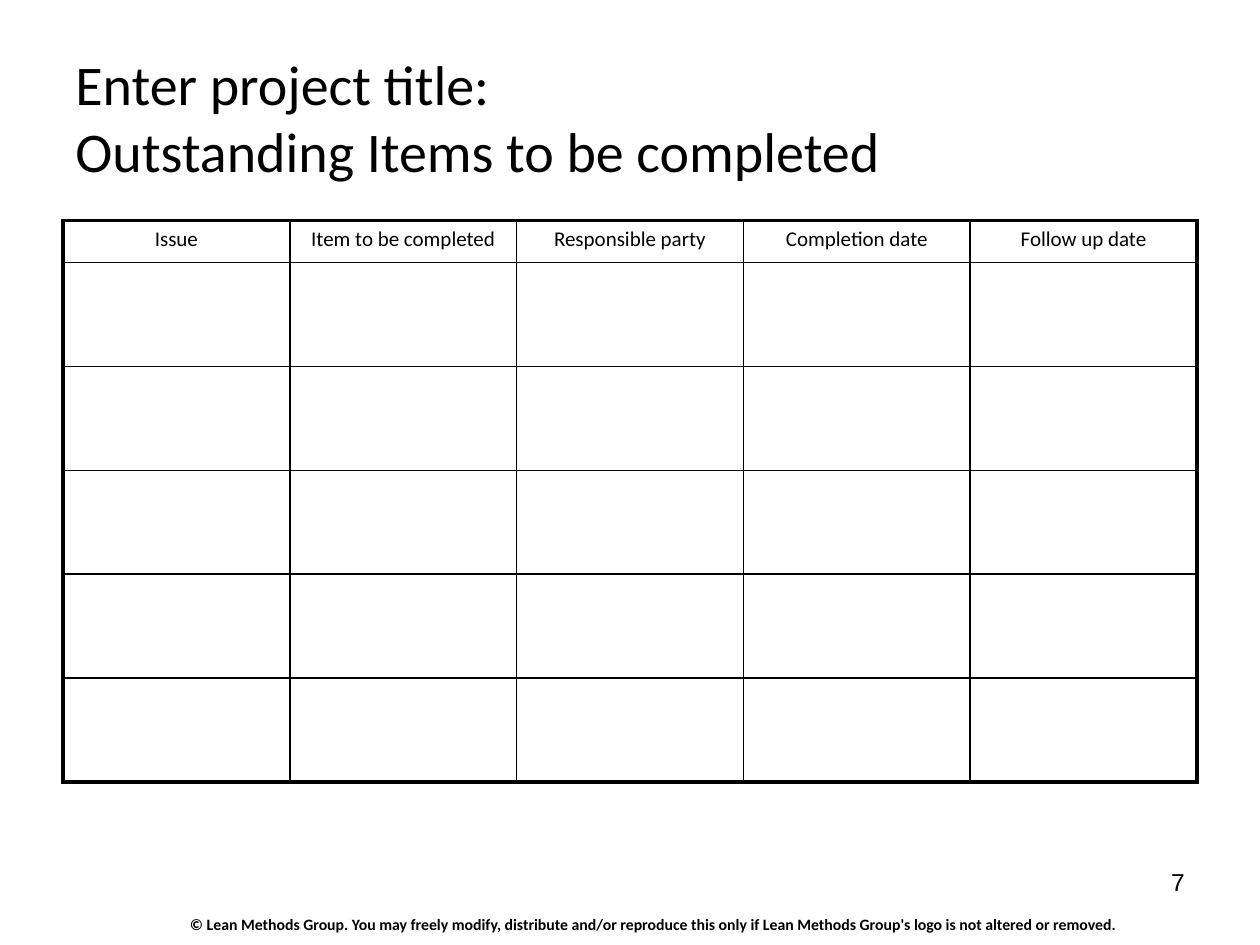
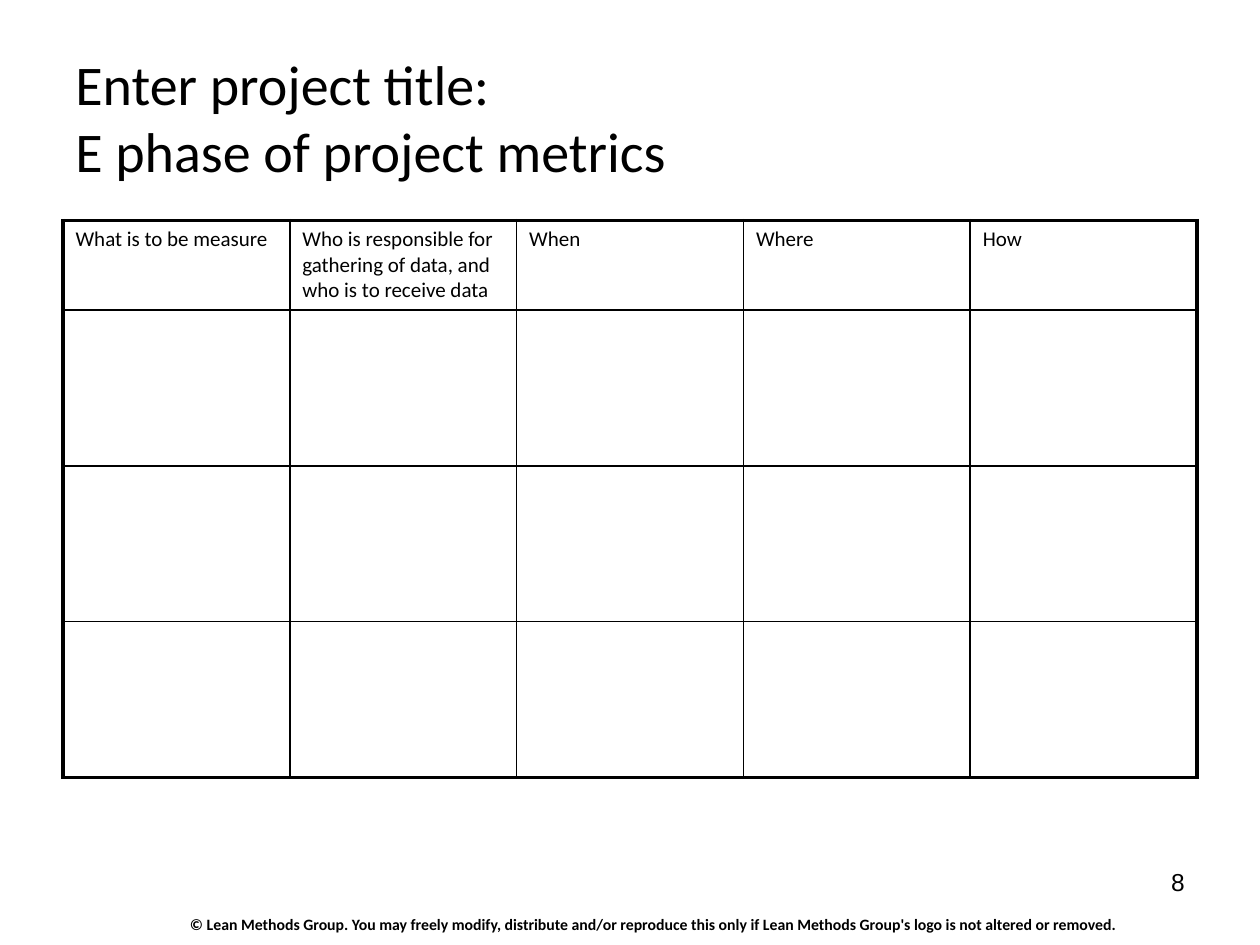
from pptx import Presentation
from pptx.dml.color import RGBColor
from pptx.enum.text import MSO_ANCHOR, PP_ALIGN
from pptx.oxml import parse_xml
from pptx.oxml.ns import nsdecls
from pptx.util import Pt

LEFT, CENTER, RIGHT = PP_ALIGN.LEFT, PP_ALIGN.CENTER, PP_ALIGN.RIGHT
TOP, MIDDLE = MSO_ANCHOR.TOP, MSO_ANCHOR.MIDDLE

# Content
FOOTER = ("© Lean Methods Group. You may freely modify, distribute and/or reproduce "
          "this only if Lean Methods Group's logo is not altered or removed.")
PROJECT_LINE = "Enter project title:"
FIRST_PAGE = 7
PAGES = [
    {
        "subject": "Outstanding Items to be completed",
        "headings": ["Issue", "Item to be completed", "Responsible party",
                     "Completion date", "Follow up date"],
        "heading_align": CENTER,
        "heading_height": 24,
        "entry_rows": 5,
        "entry_height": 59.4,
    },
    {
        "subject": "E phase of project metrics",
        "headings": ["What is to be measure",
                     "Who is responsible for gathering of data, and who is to receive data",
                     "When", "Where", "How"],
        "heading_align": LEFT,
        "heading_height": 51.2,
        "entry_rows": 3,
        "entry_height": 89,
    },
]

# Shared style, lengths in points
COLORS = {"ink": "000000", "paper": "FFFFFF"}
BODY_FONT, NUMBER_FONT = "Calibri", "Arial"
SLIDE_SIZE = (720, 540)
TITLE_BOX = (36, 21.6, 648, 90)
NUMBER_BOX = (516, 492, 168, 37.5)
FOOTER_BOX = (101.5, 519, 551.5, 18)
TABLE_LEFT, TABLE_TOP, TABLE_WIDTH = 36, 126, 648
OUTER_LINE, INNER_LINE = 2.25, 1


def write_text(frame, text, size=12, font=BODY_FONT, bold=False, align=LEFT, anchor=TOP):
    frame.word_wrap = True
    frame.vertical_anchor = anchor
    paragraph = frame.paragraphs[0]
    paragraph.text = text
    paragraph.alignment = align
    for run in paragraph.runs:
        run.font.name = font
        run.font.size = Pt(size)
        run.font.bold = bold
        run.font.color.rgb = RGBColor.from_string(COLORS["ink"])


def add_text(slide, box, text, **text_format):
    frame = slide.shapes.add_textbox(*map(Pt, box)).text_frame
    write_text(frame, text, **text_format)


def set_borders(cell, widths):
    """Draw the cell borders, given as {side: points} in the order L, R, T, B."""
    properties = cell._tc.get_or_add_tcPr()
    for position, (side, width) in enumerate(widths.items()):
        properties.insert(position, parse_xml(
            f'<a:ln{side} {nsdecls("a")} w="{Pt(width)}"><a:solidFill>'
            f'<a:srgbClr val="{COLORS["ink"]}"/></a:solidFill></a:ln{side}>'))


def add_form(slide, page):
    headings = page["headings"]
    heights = [page["heading_height"]] + [page["entry_height"]] * page["entry_rows"]
    last_row, last_column = len(heights) - 1, len(headings) - 1
    form = slide.shapes.add_table(
        len(heights), len(headings), Pt(TABLE_LEFT), Pt(TABLE_TOP),
        Pt(TABLE_WIDTH), Pt(sum(heights))).table
    form.first_row = form.horz_banding = False
    for column in form.columns:
        column.width = Pt(TABLE_WIDTH / len(headings))

    for r, height in enumerate(heights):
        form.rows[r].height = Pt(height)
        for c, heading in enumerate(headings):
            cell = form.cell(r, c)
            cell.fill.background()
            on_edge = {"L": c == 0, "R": c == last_column,
                       "T": r == 0, "B": r == last_row}
            set_borders(cell, {side: OUTER_LINE if outer else INNER_LINE
                               for side, outer in on_edge.items()})
            if r == 0:
                write_text(cell.text_frame, heading, align=page["heading_align"])


def add_page(deck, number, page):
    slide = deck.slides.add_slide(deck.slide_layouts[6])
    slide.background.fill.solid()
    slide.background.fill.fore_color.rgb = RGBColor.from_string(COLORS["paper"])
    add_text(slide, FOOTER_BOX, FOOTER, size=9, bold=True, anchor=MIDDLE)
    add_text(slide, NUMBER_BOX, str(number), size=14, font=NUMBER_FONT, align=RIGHT)
    add_text(slide, TITLE_BOX, f"{PROJECT_LINE}\n{page['subject']}", size=32, anchor=MIDDLE)
    add_form(slide, page)


def main():
    deck = Presentation()
    deck.slide_width, deck.slide_height = map(Pt, SLIDE_SIZE)
    for number, page in enumerate(PAGES, FIRST_PAGE):
        add_page(deck, number, page)
    deck.save("out.pptx")


if __name__ == "__main__":
    main()
